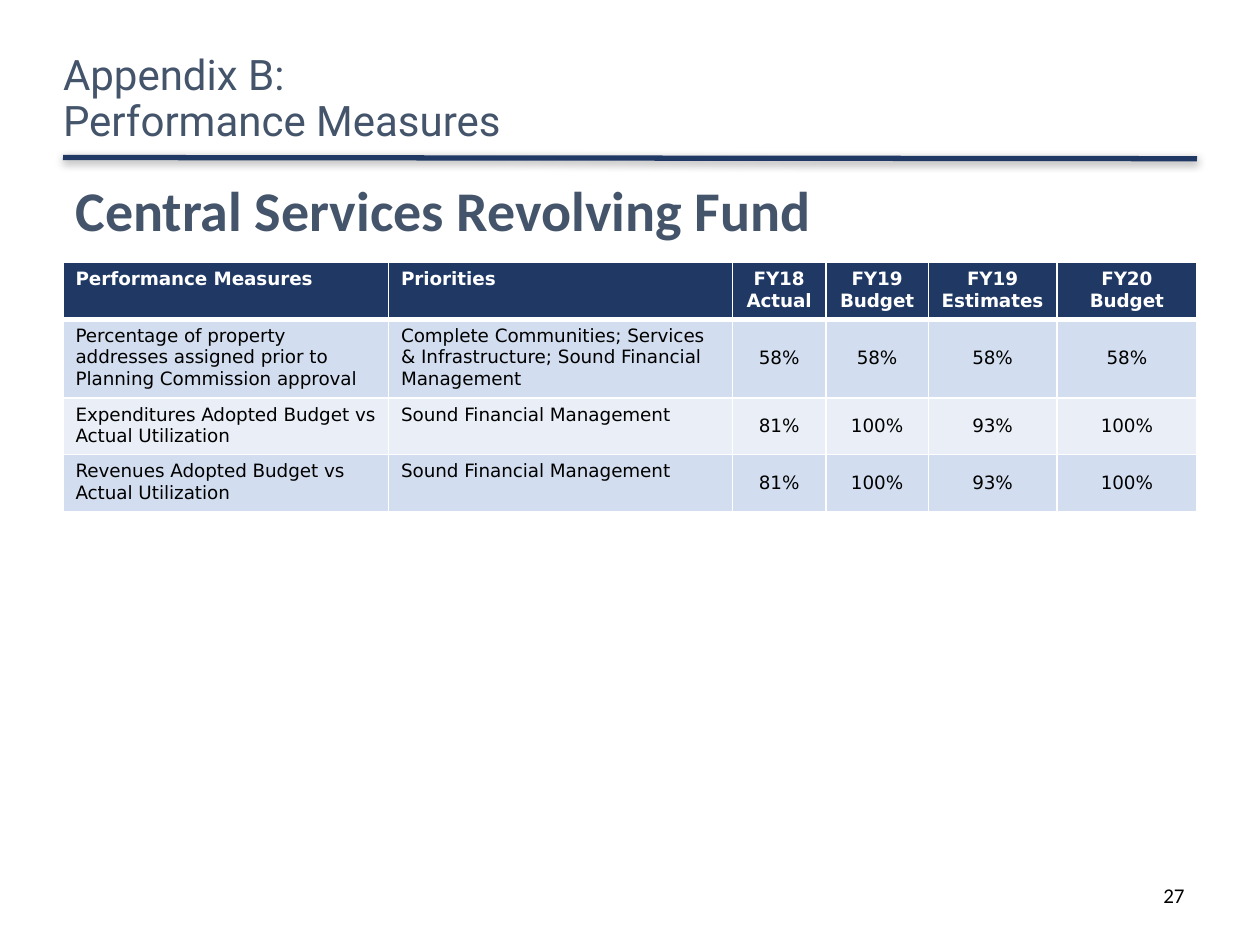
from dataclasses import dataclass

from lxml import etree
from pptx import Presentation
from pptx.dml.color import RGBColor
from pptx.enum import shapes, text
from pptx.oxml import ns
from pptx.util import Pt


@dataclass(frozen=True)
class Theme:
    navy: str = "203864"
    slate: str = "44546A"
    black: str = "000000"
    white: str = "FFFFFF"
    bands: tuple = ("D2DEEF", "EAEFF7")
    head: str = "Roboto"
    body: str = "Calibri"
    grid: str = "DejaVu Sans"
    title: float = 24
    sub: float = 32
    cell: float = 10.5
    page: float = 12


THEME = Theme()
LEFT, WIDTH = 36, 648
COLS = (186, 196.5, 53.5, 58.5, 73.5, 80)
ROWS = (31.5, 44, 31.5, 31.5)
DATA = (
    ("Performance Measures", "Priorities", "FY18\nActual", "FY19\nBudget",
     "FY19\nEstimates", "FY20\nBudget"),
    ("Percentage of property addresses assigned prior to Planning Commission approval",
     "Complete Communities; Services & Infrastructure; Sound Financial Management",
     "58%", "58%", "58%", "58%"),
    ("Expenditures Adopted Budget vs Actual Utilization",
     "Sound Financial Management", "81%", "100%", "93%", "100%"),
    ("Revenues Adopted Budget vs Actual Utilization",
     "Sound Financial Management", "81%", "100%", "93%", "100%"),
)


def style(frame, face, size, color, bold=False, align=text.PP_ALIGN.LEFT):
    for para in frame.paragraphs:
        para.alignment = align
        font = para.font
        font.name, font.size, font.bold = face, Pt(size), bold
        font.color.rgb = RGBColor.from_string(color)


def add(parent, tag, **attrs):
    return etree.SubElement(parent, ns.qn(tag), attrs)


def place(shape, box):
    shape.left, shape.top, shape.width, shape.height = map(Pt, box)


def title(slide, box):
    shape = slide.shapes.title
    place(shape, box)
    frame = shape.text_frame
    frame.text = "Appendix B:\vPerformance Measures"
    frame.margin_left = frame.margin_right = 0
    frame.margin_top = frame.margin_bottom = 0
    frame.vertical_anchor = text.MSO_ANCHOR.MIDDLE
    frame.auto_size = text.MSO_AUTO_SIZE.NONE
    frame.paragraphs[0].line_spacing = 0.9
    style(frame, THEME.head, THEME.title, THEME.slate)


def rule(slide, box):
    x, y, w, h = box
    line = slide.shapes.add_connector(
        shapes.MSO_CONNECTOR.STRAIGHT, Pt(x), Pt(y), Pt(x + w), Pt(y + h))
    line.line.width = Pt(3)
    line.line.color.rgb = RGBColor.from_string(THEME.navy)
    # Soft shadow straight below
    effects = add(line._element.spPr, "a:effectLst")
    shade = add(effects, "a:outerShdw", blurRad=str(Pt(5)), dist=str(Pt(1.6)),
                dir="5400000", algn="t", rotWithShape="0")
    color = add(shade, "a:srgbClr", val=THEME.black)
    add(color, "a:alpha", val="38000")


def label(slide, box, words, size, color, wrap=True, **look):
    frame = slide.shapes.add_textbox(*map(Pt, box)).text_frame
    frame.word_wrap = wrap
    frame.text = words
    style(frame, THEME.body, size, color, **look)
    return frame


def borders(cell, row):
    props = cell._tc.get_or_add_tcPr()
    wide = {"T": 3 if row == 1 else 1, "B": 3 if row == 0 else 1}
    for spot, side in enumerate("LRTB"):
        edge = etree.Element(ns.qn(f"a:ln{side}"), w=str(Pt(wide.get(side, 1))))
        add(add(edge, "a:solidFill"), "a:srgbClr", val=THEME.white)
        props.insert(spot, edge)


def measures(slide, box):
    table = slide.shapes.add_table(len(ROWS), len(COLS), *map(Pt, box)).table
    for col, width in zip(table.columns, COLS):
        col.width = Pt(width)
    for row, height in zip(table.rows, ROWS):
        row.height = Pt(height)
    for r, values in enumerate(DATA):
        head = r == 0
        fill = THEME.navy if head else THEME.bands[(r - 1) % 2]
        for c, value in enumerate(values):
            cell = table.cell(r, c)
            cell.text = value
            cell.fill.solid()
            cell.fill.fore_color.rgb = RGBColor.from_string(fill)
            figure = c > 1
            if figure and not head:
                cell.vertical_anchor = text.MSO_ANCHOR.MIDDLE
            style(cell.text_frame, THEME.grid, THEME.cell,
                  THEME.white if head else THEME.black, bold=head,
                  align=text.PP_ALIGN.CENTER if figure else text.PP_ALIGN.LEFT)
            borders(cell, r)


def main():
    deck = Presentation()
    deck.slide_width, deck.slide_height = Pt(720), Pt(540)
    slide = deck.slides.add_slide(deck.slide_layouts[5])
    # Heading
    rule(slide, (LEFT, 90, WIDTH, 0.7))
    title(slide, (LEFT, 24, 494, 66))
    # Fund name and its measures
    fund = label(slide, (LEFT, 97, 438.5, 46), "Central Services Revolving Fund",
                 THEME.sub, THEME.slate, wrap=False, bold=True)
    fund.auto_size = text.MSO_AUTO_SIZE.SHAPE_TO_FIT_TEXT
    measures(slide, (LEFT, 150, WIDTH, sum(ROWS)))
    # Page number
    label(slide, (516, 500.5, 168, 28.5), "27", THEME.page, THEME.black,
          align=text.PP_ALIGN.RIGHT)
    deck.save("out.pptx")


if __name__ == "__main__":
    main()
